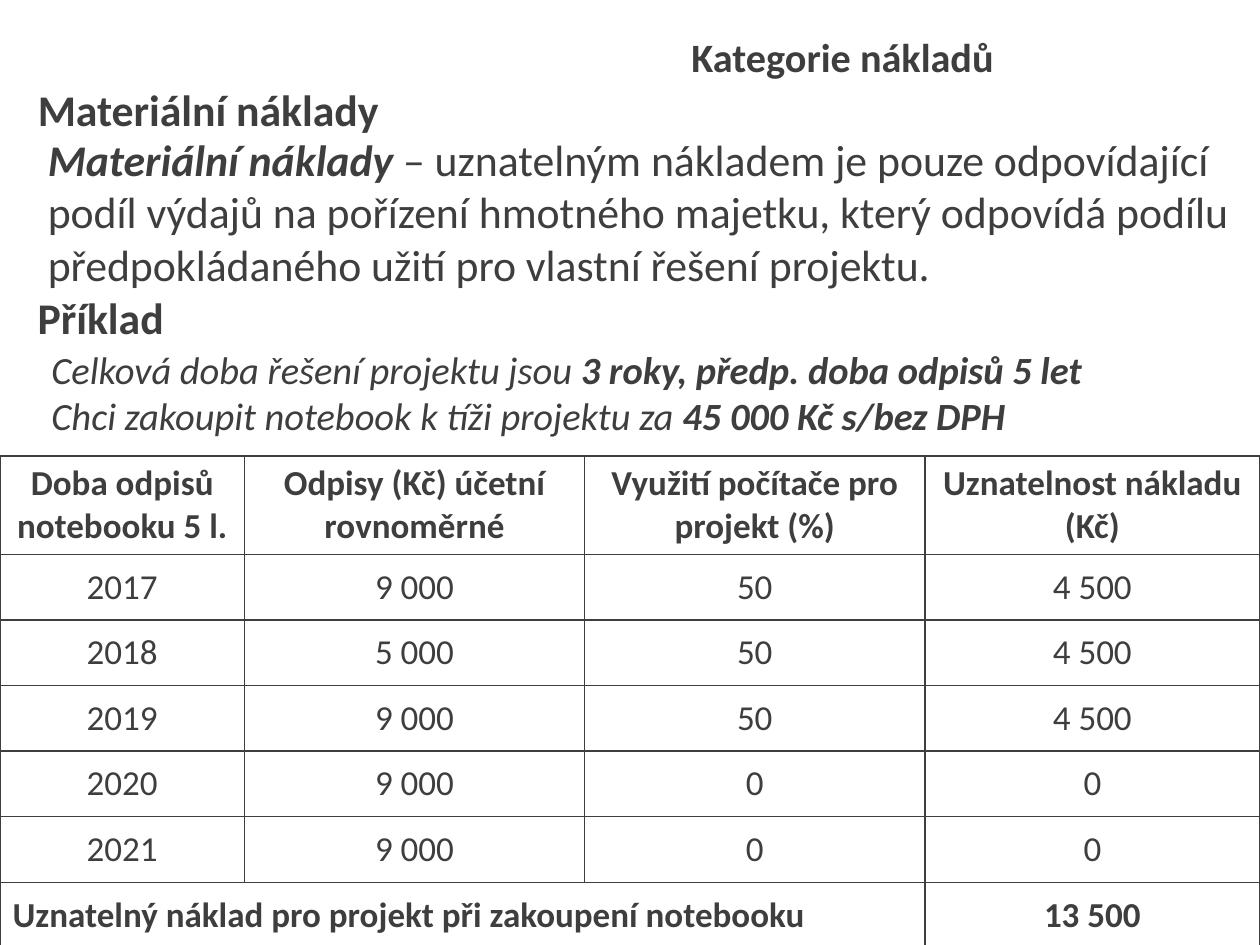
import pptx
import pptx.dml.color
import pptx.enum.text
import pptx.oxml
import pptx.oxml.ns
import pptx.util

Pt = pptx.util.Pt
ALIGN = pptx.enum.text.PP_ALIGN
MIDDLE = pptx.enum.text.MSO_ANCHOR.MIDDLE


def color(hex_string):
    return pptx.dml.color.RGBColor.from_string(hex_string)


class SlideBuilder:
    font_name = "Calibri"
    ink = "3E3E3E"
    heading_size = 25
    table_size = 20

    def __init__(self, slide):
        self.slide = slide

    def style(self, font, size, bold=False, italic=False):
        font.name = self.font_name
        font.size = Pt(size)
        font.bold = bold
        font.italic = italic
        font.color.rgb = color(self.ink)

    def prepare(self, shape):
        frame = shape.text_frame
        frame.word_wrap = True
        frame.auto_size = pptx.enum.text.MSO_AUTO_SIZE.NONE
        frame.vertical_anchor = MIDDLE
        return frame

    def title(self, text, left, top, width, height):
        shape = self.slide.shapes.title
        shape.left, shape.top = Pt(left), Pt(top)
        shape.width, shape.height = Pt(width), Pt(height)
        frame = self.prepare(shape)
        frame.text = text
        paragraph = frame.paragraphs[0]
        paragraph.alignment = ALIGN.LEFT
        self.style(paragraph.runs[0].font, self.heading_size, bold=True)

    def text(self, lines, left, top, width, height, size):
        """Each line is a list of (text, bold, italic) runs."""
        shape = self.slide.shapes.add_textbox(Pt(left), Pt(top), Pt(width), Pt(height))
        paragraph = self.prepare(shape).paragraphs[0]
        for number, line in enumerate(lines):
            if number:
                paragraph.add_line_break()
            for text, bold, italic in line:
                run = paragraph.add_run()
                run.text = text
                self.style(run.font, size, bold, italic)

    def border(self, cell):
        properties = cell._tc.get_or_add_tcPr()
        for position, side in enumerate(("lnL", "lnR", "lnT", "lnB")):
            line = pptx.oxml.parse_xml(
                f'<a:{side} {pptx.oxml.ns.nsdecls("a")} w="{Pt(1)}"><a:solidFill>'
                f'<a:srgbClr val="{self.ink}"/></a:solidFill></a:{side}>')
            properties.insert(position, line)

    def table(self, rows, total, left, top, widths, heights):
        """The last row holds a label across all columns but one, and a total."""
        last_row, last_column = len(rows), len(widths) - 1
        table = self.slide.shapes.add_table(
            last_row + 1, len(widths), Pt(left), Pt(top),
            Pt(sum(widths)), Pt(sum(heights))).table
        table.first_row = table.horz_banding = False
        for column, width in zip(table.columns, widths):
            column.width = Pt(width)
        for row, height in zip(table.rows, heights):
            row.height = Pt(height)

        label, amount = total
        table.cell(last_row, 0).merge(table.cell(last_row, last_column - 1))
        cells = rows + [[label] + [""] * (last_column - 1) + [amount]]
        for row_number, values in enumerate(cells):
            for column_number, value in enumerate(values):
                cell = table.cell(row_number, column_number)
                cell.fill.background()
                cell.vertical_anchor = MIDDLE
                self.border(cell)
                cell.text_frame.text = value
                paragraph = cell.text_frame.paragraphs[0]
                paragraph.alignment = ALIGN.LEFT if value == label else ALIGN.CENTER
                for run in paragraph.runs:
                    self.style(run.font, self.table_size, row_number in (0, last_row))


def main():
    presentation = pptx.Presentation()
    presentation.slide_width, presentation.slide_height = Pt(720), Pt(540)
    slide = presentation.slides.add_slide(presentation.slide_layouts[5])
    builder = SlideBuilder(slide)

    # Headings
    builder.title("Materiální náklady", 14.4, 39.6, 590, 45.4)
    builder.text([[("Kategorie nákladů", True, False)]], 388, 9.4, 222.5, 45.4, 23)
    builder.text([[("Příklad", True, False)]], 14.4, 158.4, 590, 45.4,
                 builder.heading_size)

    # Definition
    builder.text([[
        ("Materiální náklady ", True, True),
        ("– uznatelným nákladem je pouze odpovídající podíl výdajů na pořízení "
         "hmotného majetku, který odpovídá podílu předpokládaného užití pro "
         "vlastní řešení projektu.", False, False),
    ]], 20.2, 58.3, 699.8, 124.6, builder.heading_size)

    # Example
    builder.text([
        [("Celková doba řešení projektu jsou ", False, True),
         ("3 roky, předp. doba odpisů 5 let", True, True)],
        [("Chci zakoupit notebook k tíži projektu za ", False, True),
         ("45 000 Kč s/bez DPH", True, True)],
    ], 22.3, 189.4, 710, 69, 22)

    # Depreciation table
    rows = [
        ["Doba odpisů notebooku 5 l.", "Odpisy (Kč) účetní rovnoměrné",
         "Využití počítače pro projekt (%)", "Uznatelnost nákladu (Kč)"],
        ["2017", "9 000", "50", "4 500"],
        ["2018", "5 000", "50", "4 500"],
        ["2019", "9 000", "50", "4 500"],
        ["2020", "9 000", "0", "0"],
        ["2021", "9 000", "0", "0"],
    ]
    total = ("Uznatelný náklad pro projekt při zakoupení notebooku", "13 500")
    builder.table(rows, total, 0, 260.6, [139.7, 194.4, 194.4, 191.5],
                  [33.8] + [37.5] * len(rows))

    presentation.save("out.pptx")


if __name__ == "__main__":
    main()
